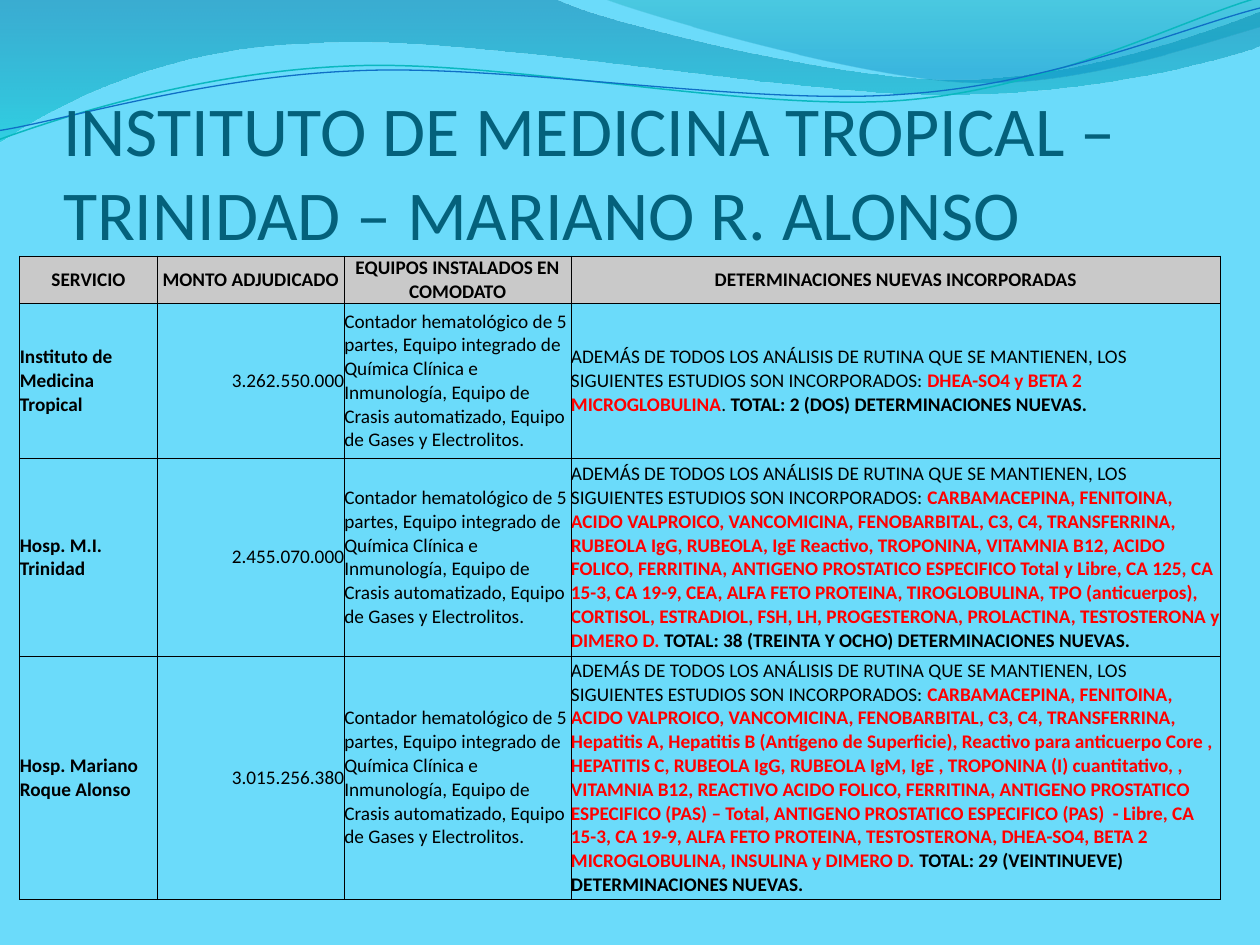
from dataclasses import dataclass
from typing import Optional

import pptx
import pptx.dml.color
import pptx.enum.text
import pptx.oxml
import pptx.oxml.ns
import pptx.util

Cm = pptx.util.Cm
Pt = pptx.util.Pt
ALIGN = pptx.enum.text.PP_ALIGN
ANCHOR = pptx.enum.text.MSO_ANCHOR
qn = pptx.oxml.ns.qn
NAMESPACE = pptx.oxml.ns.nsdecls("a")

CM_PER_INCH = 2.54
BLACK, RED = "000000", "FF0000"


@dataclass
class Stop:
    position: float
    color: str
    opacity: int


@dataclass
class Wave:
    """Points in inches; a segment has one end point or three Bezier points."""
    start: tuple
    segments: list
    stops: Optional[list] = None
    line: str = ""
    width: float = 0
    rotation: float = 0


@dataclass
class Service:
    name: str
    amount: str
    tests: str
    joint: str
    total: str


WAVES = [
    Wave((0, 0), [
        [(4.4, -0.01)],
        [(4.76, 0.17), (6.64, 0.63), (7.58, 0.63)],
        [(8.53, 0.63), (9.58, 0.26), (10, 0.09)],
        [(10.01, 0.36)],
        [(9.83, 0.44), (8.7, 0.76), (7.46, 0.75)],
        [(6.22, 0.75), (3.82, 0.28), (2.57, 0.34)],
        [(1.29, 0.36), (0.46, 0.83), (-0.01, 1.13)],
        [(0, 0)],
    ], stops=[Stop(0, "0074A1", 45), Stop(1, "00C6CF", 55)]),
    Wave((4.79, -0.01), [
        [(5.09, 0.11), (6.82, 0.62), (7.69, 0.65)],
        [(8.56, 0.69), (9.61, 0.32), (10, 0.21)],
        [(10, 0)],
        [(4.79, -0.01)],
    ], stops=[Stop(0, "00A1A9", 30), Stop(0.8, "008BBF", 45)]),
    Wave((-0.02, 0.87), [
        [(0.47, 0.72), (1.58, 0.41), (2.78, 0.42)],
        [(3.96, 0.42), (5.91, 0.93), (7.12, 0.9)],
        [(8.32, 0.87), (9.4, 0.36), (10, 0.22)],
    ], line="0AB8BF", width=0.85, rotation=357.3),
    Wave((-0.02, 0.8), [
        [(0.46, 0.75), (1.64, 0.45), (2.83, 0.46)],
        [(4.03, 0.46), (5.96, 0.89), (7.16, 0.85)],
        [(8.35, 0.83), (9.42, 0.42), (10.02, 0.3)],
    ], line="0F6FC6", width=0.75, rotation=357.3),
]

HEADERS = ["SERVICIO", "MONTO ADJUDICADO", "EQUIPOS INSTALADOS EN COMODATO",
           "DETERMINACIONES NUEVAS INCORPORADAS"]
COLUMN_WIDTHS = [2.77, 3.77, 4.57, 13.1]
ROW_HEIGHTS = [0.89, 3.12, 3.99, 4.9]
EQUIPMENT = ("Contador hematológico de 5 partes, Equipo integrado de Química Clínica e "
             "Inmunología, Equipo de Crasis automatizado, Equipo de Gases y Electrolitos.")
INTRODUCTION = ("ADEMÁS DE TODOS LOS ANÁLISIS DE RUTINA QUE SE MANTIENEN, LOS SIGUIENTES "
                "ESTUDIOS SON INCORPORADOS: ")
COMMON_TESTS = ("CARBAMACEPINA, FENITOINA, ACIDO VALPROICO, VANCOMICINA, FENOBARBITAL, "
                "C3, C4, TRANSFERRINA, ")
SERVICES = [
    Service("Instituto de Medicina Tropical", "3.262.550.000",
            "DHEA-SO4 y BETA 2 MICROGLOBULINA", ". ", "2 (DOS)"),
    Service("Hosp. M.I. Trinidad", "2.455.070.000",
            COMMON_TESTS + "RUBEOLA IgG, RUBEOLA, IgE Reactivo, TROPONINA, VITAMNIA B12, "
            "ACIDO FOLICO, FERRITINA, ANTIGENO PROSTATICO ESPECIFICO Total y Libre, CA 125, "
            "CA 15-3, CA 19-9, CEA, ALFA FETO PROTEINA, TIROGLOBULINA, TPO (anticuerpos), "
            "CORTISOL, ESTRADIOL, FSH, LH, PROGESTERONA, PROLACTINA, TESTOSTERONA y "
            "DIMERO D. ", "", "38 (TREINTA Y OCHO)"),
    Service("Hosp. Mariano Roque Alonso", "3.015.256.380",
            COMMON_TESTS + "Hepatitis A, Hepatitis B (Antígeno de Superficie), Reactivo para "
            "anticuerpo Core , HEPATITIS C, RUBEOLA IgG, RUBEOLA IgM, IgE , TROPONINA (I) "
            "cuantitativo, , VITAMNIA B12, REACTIVO ACIDO FOLICO, FERRITINA, ANTIGENO "
            "PROSTATICO ESPECIFICO (PAS) – Total, ANTIGENO PROSTATICO ESPECIFICO (PAS)  - "
            "Libre, CA 15-3, CA 19-9, ALFA FETO PROTEINA, TESTOSTERONA, DHEA-SO4, BETA 2 "
            "MICROGLOBULINA, INSULINA y DIMERO D. ", "", "29 (VEINTINUEVE)"),
]


def rgb(color: str):
    return pptx.dml.color.RGBColor.from_string(color)


def add_text(para, text: str, *, size: float = 11, color: str = BLACK,
             bold: bool = False, align=ALIGN.LEFT) -> None:
    para.alignment = align
    span = para.add_run()
    span.text = text
    span.font.name = "Calibri"
    span.font.size = Pt(size)
    span.font.bold = bold
    span.font.color.rgb = rgb(color)


def bend_segments(shape, segments: list) -> None:
    """Join each three straight steps of a Bezier segment into one curve."""
    steps = iter(list(shape.element.iter(qn("a:lnTo"))))
    for segment in segments:
        group = [next(steps) for _ in segment]
        if len(group) == 1:
            continue
        curve = pptx.oxml.parse_xml(f"<a:cubicBezTo {NAMESPACE}/>")
        group[0].addprevious(curve)
        for step in group:
            curve.append(step[0])
            step.getparent().remove(step)


def draw_wave(page, wave: Wave) -> None:
    points = [wave.start] + [point for segment in wave.segments for point in segment]
    points = [(Cm(x * CM_PER_INCH), Cm(y * CM_PER_INCH)) for x, y in points]
    builder = page.shapes.build_freeform(*points[0])
    builder.add_line_segments(points[1:], close=bool(wave.stops))
    shape = builder.convert_to_shape()
    bend_segments(shape, wave.segments)
    shape.shadow.inherit = False
    shape.rotation = wave.rotation
    if not wave.stops:
        shape.fill.background()
        shape.line.color.rgb = rgb(wave.line)
        shape.line.width = Pt(wave.width)
        return
    shape.line.fill.background()
    shape.fill.gradient()
    shape.fill.gradient_angle = 270
    for target, stop in zip(shape.fill.gradient_stops, wave.stops):
        target.position = stop.position
        target.color.rgb = rgb(stop.color)
    for node, stop in zip(shape.element.iter(qn("a:srgbClr")), wave.stops):
        node.append(pptx.oxml.parse_xml(
            f'<a:alpha {NAMESPACE} val="{stop.opacity * 1000}"/>'))


def format_cell(cell, fill: str = "") -> None:
    cell.margin_left = cell.margin_right = cell.margin_top = cell.margin_bottom = 0
    cell.vertical_anchor = ANCHOR.MIDDLE
    properties = cell._tc.get_or_add_tcPr()
    for side in "LRTB":
        properties.append(pptx.oxml.parse_xml(
            f'<a:ln{side} {NAMESPACE} w="{Pt(0.5)}"><a:solidFill>'
            f'<a:srgbClr val="{BLACK}"/></a:solidFill></a:ln{side}>'))
    if fill:
        cell.fill.solid()
        cell.fill.fore_color.rgb = rgb(fill)
    else:
        cell.fill.background()


def draw_table(page) -> None:
    frame = page.shapes.add_table(len(ROW_HEIGHTS), len(COLUMN_WIDTHS), Cm(0.4), Cm(5.16),
                                  Cm(sum(COLUMN_WIDTHS)), Cm(sum(ROW_HEIGHTS)))
    table = frame.table
    table.first_row = table.horz_banding = False
    for column, width in zip(table.columns, COLUMN_WIDTHS):
        column.width = Cm(width)
    for row, height in zip(table.rows, ROW_HEIGHTS):
        row.height = Cm(height)
    for cell, header in zip(table.rows[0].cells, HEADERS):
        format_cell(cell, "C9C9C9")
        add_text(cell.text_frame.paragraphs[0], header, bold=True, align=ALIGN.CENTER)
    for number, service in enumerate(SERVICES, start=1):
        cells = list(table.rows[number].cells)
        for cell in cells:
            format_cell(cell)
        name, amount, equipment, tests = [cell.text_frame.paragraphs[0] for cell in cells]
        add_text(name, service.name, bold=True)
        add_text(amount, service.amount, align=ALIGN.RIGHT)
        add_text(equipment, EQUIPMENT)
        add_text(tests, INTRODUCTION)
        add_text(tests, service.tests, color=RED, bold=True)
        if service.joint:
            add_text(tests, service.joint)
        add_text(tests, f"TOTAL: {service.total} DETERMINACIONES NUEVAS.", bold=True)


def place_title(page) -> None:
    title = page.shapes.title
    title.left, title.top, title.width, title.height = Cm(1.27), Cm(1.96), Cm(22.86), Cm(3.18)
    box = title.text_frame
    box.margin_left = box.margin_right = box.margin_bottom = 0
    box.margin_top = Cm(0.13)
    box.word_wrap = True
    box.auto_size = pptx.enum.text.MSO_AUTO_SIZE.NONE
    box.vertical_anchor = ANCHOR.BOTTOM
    add_text(box.paragraphs[0], "INSTITUTO DE MEDICINA TROPICAL – TRINIDAD – MARIANO R. ALONSO",
             size=40, color="04617B")
    title.element.getparent().append(title.element)  # in front of the waves


def main() -> None:
    deck = pptx.Presentation()
    deck.slide_width, deck.slide_height = Cm(25.4), Cm(19.05)
    page = deck.slides.add_slide(deck.slide_layouts[5])
    page.background.fill.solid()
    page.background.fill.fore_color.rgb = rgb("6BDBFA")
    for wave in WAVES:
        draw_wave(page, wave)
    place_title(page)
    draw_table(page)
    deck.save("out.pptx")


if __name__ == "__main__":
    main()
